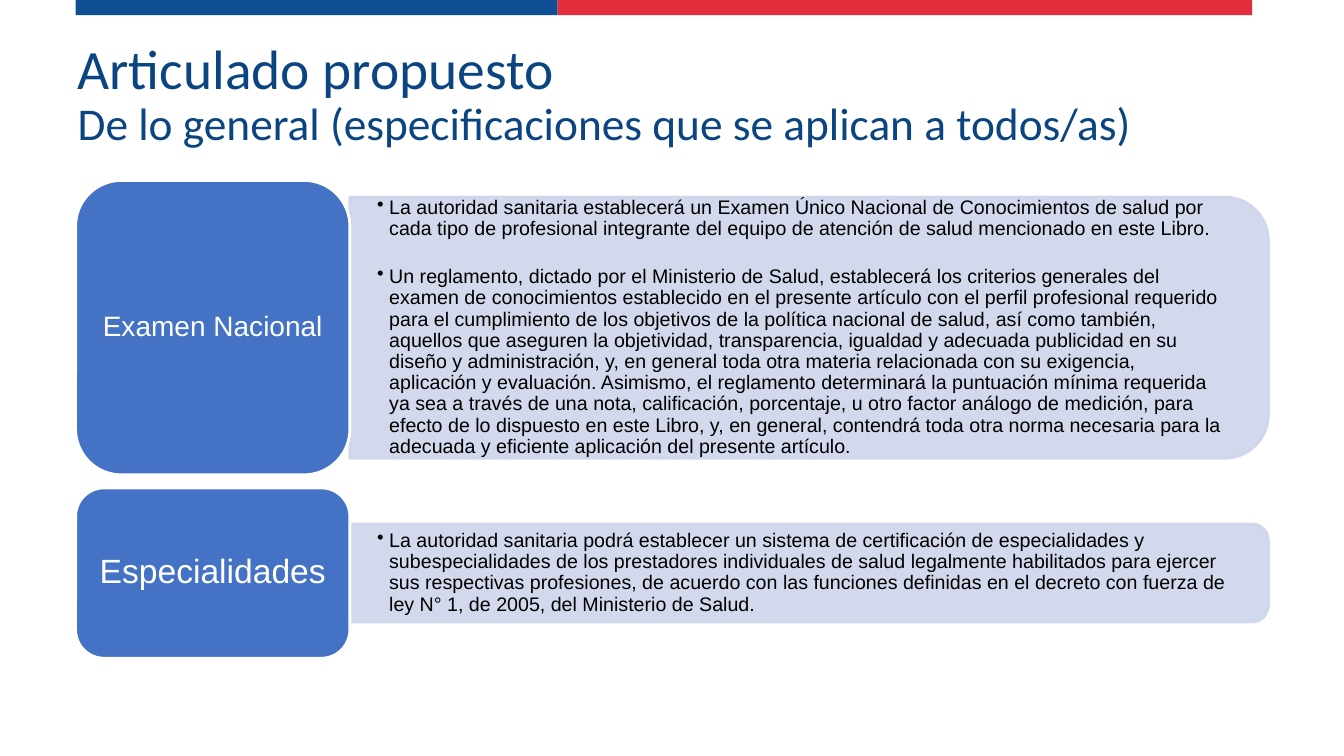
"""Build the slide on the general rules of the proposed articles."""
from copy import deepcopy

from lxml.etree import SubElement
from pptx import Presentation
from pptx.dml.color import RGBColor
from pptx.enum.shapes import MSO_SHAPE as Shape
from pptx.enum.text import MSO_ANCHOR as Anchor, MSO_AUTO_SIZE as AutoSize, PP_ALIGN as Align
from pptx.oxml.ns import qn
from pptx.util import Inches, Pt

TITLE = [("Articulado propuesto", 39.6),
         ("De lo general (especificaciones que se aplican a todos/as)", 32.4)]
TOPICS = [
    {"label": "Examen Nacional", "size": 20, "top": 1.79, "height": 2.92, "panel": 2.59,
     "points": [
         "La autoridad sanitaria establecerá un Examen Único Nacional de Conocimientos de salud por "
         "cada tipo de profesional integrante del equipo de atención de salud mencionado en este Libro.",
         "Un reglamento, dictado por el Ministerio de Salud, establecerá los criterios generales del "
         "examen de conocimientos establecido en el presente artículo con el perfil profesional requerido "
         "para el cumplimiento de los objetivos de la política nacional de salud, así como también, "
         "aquellos que aseguren la objetividad, transparencia, igualdad y adecuada publicidad en su "
         "diseño y administración, y, en general toda otra materia relacionada con su exigencia, "
         "aplicación y evaluación. Asimismo, el reglamento determinará la puntuación mínima requerida "
         "ya sea a través de una nota, calificación, porcentaje, u otro factor análogo de medición, para "
         "efecto de lo dispuesto en este Libro, y, en general, contendrá toda otra norma necesaria para la "
         "adecuada y eficiente aplicación del presente artículo."]},
    {"label": "Especialidades", "size": 24, "top": 4.84, "height": 1.69, "panel": 0.97,
     "points": [
         "La autoridad sanitaria podrá establecer un sistema de certificación de especialidades y "
         "subespecialidades de los prestadores individuales de salud legalmente habilitados para ejercer "
         "sus respectivas profesiones, de acuerdo con las funciones definidas en el decreto con fuerza de "
         "ley N° 1, de 2005, del Ministerio de Salud."]},
]
THEME = {"stripes": ("0F4E93", "E22D3B"), "title": "0B4581", "label": "4472C4", "panel": "CFD5EA",
         "light": "FFFFFF", "dark": "000000", "heading": "Calibri", "body": "Arial",
         "point": 14, "opacity": 90}
LEFT, LABEL_WIDTH, PANEL_WIDTH = 0.75, 2.72, 9.11
STRIPE_WIDTHS, STRIPE_HEIGHT = (4.78, 6.89), 0.15
CORNER_INSET = 0.29 / 6
BULLET_INDENT, POINT_GAP = 0.12, 19


def assign(target, values):
    for name, value in values.items():
        setattr(target, name, value)


def add_block(slide, kind, box, fill, line=None):
    block = slide.shapes.add_shape(kind, *map(Inches, box))
    block.shadow.inherit = False
    block.fill.solid()
    block.fill.fore_color.rgb = RGBColor.from_string(fill)
    if line:
        block.line.color.rgb = RGBColor.from_string(line)
        block.line.width = Pt(2)
    else:
        block.line.fill.background()
    return block


def set_frame(frame, across, down):
    assign(frame, {"word_wrap": True, "auto_size": AutoSize.NONE, "vertical_anchor": Anchor.MIDDLE,
                   "margin_left": Inches(across), "margin_right": Inches(across),
                   "margin_top": Inches(down), "margin_bottom": Inches(down)})


def add_span(para, text, font, size, color):
    span = para.add_run()
    span.text = text
    assign(span.font, {"name": font, "size": Pt(size)})
    span.font.color.rgb = RGBColor.from_string(color)
    return span


def add_bullet(para):
    props = para._p.get_or_add_pPr()
    assign_indent = {"marL": Inches(BULLET_INDENT), "indent": -Inches(BULLET_INDENT)}
    for name, value in assign_indent.items():
        props.set(name, str(value))
    SubElement(SubElement(props, qn("a:buClr")), qn("a:srgbClr"), val=THEME["dark"])
    SubElement(props, qn("a:buChar"), char="•")


def add_title(slide):
    title = slide.shapes.title
    assign(title, {"left": Inches(0.67), "top": Inches(0.65),
                   "width": Inches(10.77), "height": Inches(0.6)})
    set_frame(title.text_frame, 0.1, 0.05)
    para = title.text_frame.paragraphs[0]
    assign(para, {"alignment": Align.LEFT, "line_spacing": 0.9})
    (heading, heading_size), (subheading, subheading_size) = TITLE
    span = add_span(para, heading, THEME["heading"], heading_size, THEME["title"])
    para.add_line_break()
    para._p[-1].append(deepcopy(span._r.rPr))
    add_span(para, subheading, THEME["heading"], subheading_size, THEME["title"])


def add_panel(slide, topic):
    depth = topic["panel"]
    left = LEFT + LABEL_WIDTH
    middle = topic["top"] + topic["height"] / 2
    box = (left + (PANEL_WIDTH - depth) / 2, middle - PANEL_WIDTH / 2, depth, PANEL_WIDTH)
    panel = add_block(slide, Shape.ROUND_2_SAME_RECTANGLE, box, THEME["panel"], THEME["panel"])
    panel.rotation = 90
    for color in panel._element.spPr.iter(qn("a:srgbClr")):
        SubElement(color, qn("a:alpha"), val=str(THEME["opacity"] * 1000))

    inset = depth * CORNER_INSET
    text_box = (left, middle - depth / 2 + inset, PANEL_WIDTH - inset, depth - 2 * inset)
    frame = slide.shapes.add_textbox(*map(Inches, text_box)).text_frame
    set_frame(frame, 0.27, 0.14)
    for index, point in enumerate(topic["points"]):
        para = frame.add_paragraph() if index else frame.paragraphs[0]
        assign(para, {"level": 1, "line_spacing": 0.9, "space_before": Pt(POINT_GAP if index else 0)})
        add_bullet(para)
        add_span(para, point, THEME["body"], THEME["point"], THEME["dark"])


def add_label(slide, topic):
    box = (LEFT, topic["top"], LABEL_WIDTH, topic["height"])
    label = add_block(slide, Shape.ROUNDED_RECTANGLE, box, THEME["label"], THEME["light"])
    set_frame(label.text_frame, 0.08, 0.04)
    para = label.text_frame.paragraphs[0]
    assign(para, {"alignment": Align.CENTER, "line_spacing": 0.9})
    add_span(para, topic["label"], THEME["body"], topic["size"], THEME["light"])


def main():
    deck = Presentation()
    assign(deck, {"slide_width": Inches(13.33), "slide_height": Inches(7.5)})
    page = deck.slides.add_slide(deck.slide_layouts[5])
    for index, (width, color) in enumerate(zip(STRIPE_WIDTHS, THEME["stripes"])):
        left = LEFT + sum(STRIPE_WIDTHS[:index])
        add_block(page, Shape.RECTANGLE, (left, 0, width, STRIPE_HEIGHT), color)
    add_title(page)
    for topic in TOPICS:
        add_panel(page, topic)
        add_label(page, topic)
    deck.save("out.pptx")


if __name__ == "__main__":
    main()
